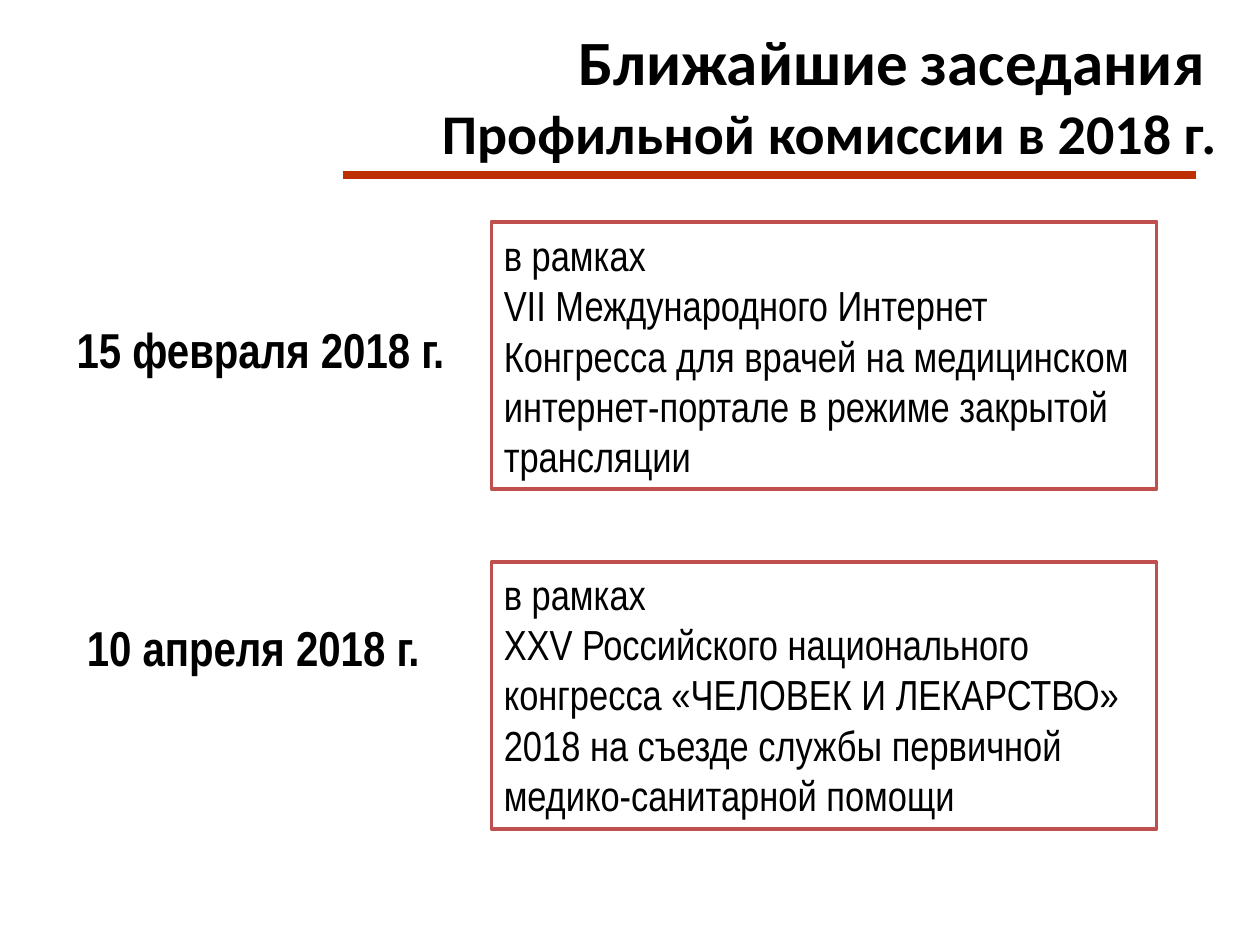
"""Build the slide announcing the next commission meetings of 2018."""
from dataclasses import dataclass

import pptx
import pptx.dml.color
import pptx.enum.shapes
import pptx.enum.text
import pptx.oxml
import pptx.oxml.ns
import pptx.util
from pptx.enum.text import MSO_ANCHOR, PP_ALIGN

BLACK = pptx.dml.color.RGBColor(0x00, 0x00, 0x00)
WHITE = pptx.dml.color.RGBColor(0xFF, 0xFF, 0xFF)
RULE_RED = pptx.dml.color.RGBColor(0xBC, 0x30, 0x04)
BORDER_RED = pptx.dml.color.RGBColor(0xC0, 0x50, 0x4D)

WIDTH = pptx.util.Inches(10)
HEIGHT = pptx.util.Inches(7.5)
COLUMN = WIDTH / 100
ROW = HEIGHT / 75

BODY_FONT = "Arial Narrow"
TITLE_FONT = "Calibri"


@dataclass(frozen=True)
class Area:
    column: float
    row: float
    columns: float
    rows: float

    def emu(self) -> tuple[int, int, int, int]:
        return (round(self.column * COLUMN), round(self.row * ROW),
                round(self.columns * COLUMN), round(self.rows * ROW))


@dataclass(frozen=True)
class Run:
    text: str
    size: int
    font: str = BODY_FONT
    bold: bool = False


@dataclass(frozen=True)
class Meeting:
    date: str
    date_area: Area
    event: str
    event_area: Area
    anchor: MSO_ANCHOR


TITLE_AREA = Area(0, 1.3, 97.6, 12.5)
TITLE = [
    [Run("Ближайшие", 36, TITLE_FONT, True), Run(" ", 32, TITLE_FONT, True),
     Run("заседания", 36, TITLE_FONT, True), Run(" ", 32, TITLE_FONT, True)],
    [Run("Профильной комиссии в 2018 г.", 32, TITLE_FONT, True)],
]
MEETINGS = [
    Meeting("15 февраля 2018 г.", Area(5.1, 24.9, 60.2, 3.8),
            "VII Международного Интернет Конгресса для врачей на медицинском "
            "интернет-портале в режиме закрытой трансляции",
            Area(39, 17.6, 52.8, 21.2), MSO_ANCHOR.MIDDLE),
    Meeting("10 апреля 2018 г.", Area(5.9, 48.5, 60.2, 3.8),
            "XXV Российского национального конгресса «ЧЕЛОВЕК И ЛЕКАРСТВО» "
            "2018 на съезде службы первичной медико-санитарной помощи",
            Area(39, 44.6, 52.8, 21.2), MSO_ANCHOR.TOP),
]


def write(frame, paragraphs: list[list[Run]], align=PP_ALIGN.LEFT,
          anchor=MSO_ANCHOR.TOP) -> None:
    frame.word_wrap = True
    frame.vertical_anchor = anchor
    for index, runs in enumerate(paragraphs):
        paragraph = frame.add_paragraph() if index else frame.paragraphs[0]
        paragraph.alignment = align
        for part in runs:
            run = paragraph.add_run()
            run.text = part.text
            run.font.size = pptx.util.Pt(part.size)
            run.font.name = part.font
            run.font.bold = part.bold
            run.font.color.rgb = BLACK


def draw_rule(slide, start: float, end: float, row: float) -> None:
    rule = slide.shapes.add_connector(
        pptx.enum.shapes.MSO_CONNECTOR.STRAIGHT, round(start * COLUMN),
        round(row * ROW), round(end * COLUMN), round(row * ROW))
    rule.line.color.rgb = RULE_RED
    rule.line.width = pptx.util.Pt(4.5)
    properties = rule._element.spPr
    properties.append(pptx.oxml.parse_xml(
        f"<a:effectLst {pptx.oxml.ns.nsdecls('a')}/>"))


def draw_meeting(slide, meeting: Meeting) -> None:
    date = slide.shapes.add_textbox(*meeting.date_area.emu())
    write(date.text_frame, [[Run(meeting.date, 28, bold=True)]])

    event = slide.shapes.add_shape(
        pptx.enum.shapes.MSO_SHAPE.RECTANGLE, *meeting.event_area.emu())
    event.shadow.inherit = False
    event.fill.solid()
    event.fill.fore_color.rgb = WHITE
    event.line.color.rgb = BORDER_RED
    event.line.width = pptx.util.Pt(2)
    write(event.text_frame, [[Run("в рамках", 24)], [Run(meeting.event, 24)]],
          anchor=meeting.anchor)


def main() -> None:
    deck = pptx.Presentation()
    deck.slide_width, deck.slide_height = WIDTH, HEIGHT
    slide = deck.slides.add_slide(deck.slide_layouts[6])
    draw_rule(slide, 27.2, 94.9, 13.9)
    title = slide.shapes.add_textbox(*TITLE_AREA.emu())
    write(title.text_frame, TITLE, PP_ALIGN.RIGHT)
    for meeting in MEETINGS:
        draw_meeting(slide, meeting)
    deck.save("out.pptx")


if __name__ == "__main__":
    main()
